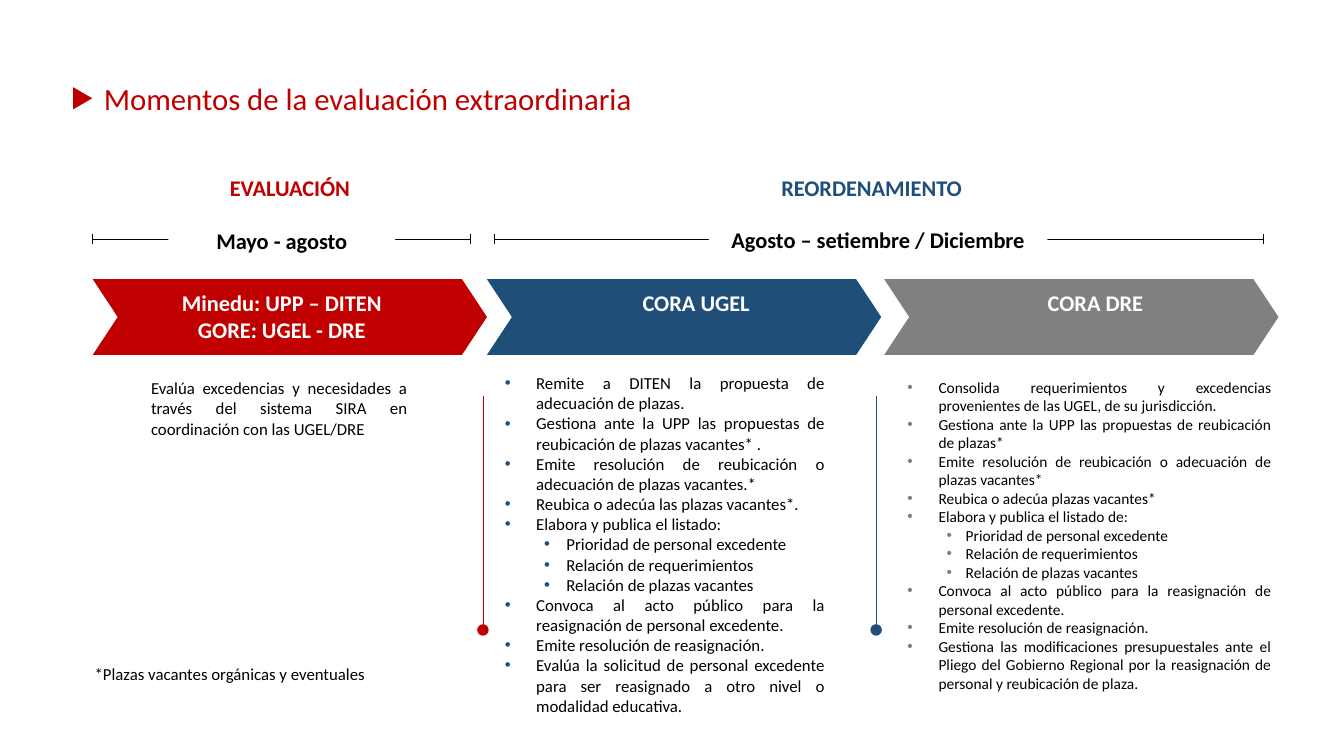
from lxml import etree
from pptx import Presentation
from pptx.dml.color import RGBColor
from pptx.enum import shapes, text
from pptx.oxml import ns
from pptx.util import Inches, Pt

RED = RGBColor(0xC0, 0x00, 0x00)
BLUE = RGBColor(0x1F, 0x4E, 0x79)
GRAY = RGBColor(0x80, 0x80, 0x80)
DOT_GRAY = RGBColor(0x7F, 0x7F, 0x7F)
BLACK = RGBColor(0, 0, 0)
WHITE = RGBColor(0xFF, 0xFF, 0xFF)

LEFT, CENTER, JUST = (text.PP_ALIGN.LEFT, text.PP_ALIGN.CENTER,
                      text.PP_ALIGN.JUSTIFY)
KIND = shapes.MSO_SHAPE

# Each task is (level, text)
UGEL = [
    (0, "Remite a DITEN la propuesta de adecuación de plazas."),
    (0, "Gestiona ante la UPP las propuestas de reubicación de plazas vacantes* ."),
    (0, "Emite resolución de reubicación o adecuación de plazas vacantes.*"),
    (0, "Reubica o adecúa las plazas vacantes*."),
    (0, "Elabora y publica el listado:"),
    (1, "Prioridad de personal excedente"),
    (1, "Relación de requerimientos"),
    (1, "Relación de plazas vacantes"),
    (0, "Convoca al acto público para la reasignación de personal excedente."),
    (0, "Emite resolución de reasignación."),
    (0, "Evalúa la solicitud de personal excedente para ser reasignado a otro "
        "nivel o modalidad educativa."),
]
DRE = [
    (0, "Consolida requerimientos y excedencias provenientes de las UGEL, de su "
        "jurisdicción."),
    (0, "Gestiona ante la UPP las propuestas de reubicación de plazas*"),
    (0, "Emite resolución de reubicación o adecuación de plazas vacantes*"),
    (0, "Reubica o adecúa plazas vacantes*"),
    (0, "Elabora y publica el listado de:"),
    (1, "Prioridad de personal excedente"),
    (1, "Relación de requerimientos"),
    (1, "Relación de plazas vacantes"),
    (0, "Convoca al acto público para la reasignación de personal excedente."),
    (0, "Emite resolución de reasignación."),
    (0, "Gestiona las modificaciones presupuestales ante el Pliego del Gobierno "
        "Regional por la reasignación de personal y reubicación de plaza."),
]


def write(para, words, size=12, color=BLACK, bold=False, align=LEFT):
    para.alignment = align
    run = para.add_run()
    run.text = words
    font = run.font
    font.name, font.size, font.bold = "Calibri", Pt(size), bold
    font.color.rgb = color


def fill_frame(frame, lines, **form):
    frame.word_wrap = True
    frame.auto_size = text.MSO_AUTO_SIZE.NONE
    frame.vertical_anchor = text.MSO_ANCHOR.TOP
    for i, words in enumerate(lines):
        para = frame.paragraphs[0] if i == 0 else frame.add_paragraph()
        write(para, words, **form)


def add_text(slide, box, *lines, **form):
    shape = slide.shapes.add_textbox(*map(Inches, box))
    fill_frame(shape.text_frame, lines, **form)
    return shape


def add_label(slide, box, words, color):
    label = add_text(slide, box, words, size=16, color=color, bold=True,
                     align=CENTER)
    label.fill.solid()
    label.fill.fore_color.rgb = WHITE


def add_form(slide, kind, box, color, edge=False):
    shape = slide.shapes.add_shape(kind, *map(Inches, box))
    shape.shadow.inherit = False
    shape.fill.solid()
    shape.fill.fore_color.rgb = color
    if edge:
        shape.line.color.rgb = color
        shape.line.width = Pt(1)
    else:
        shape.line.fill.background()
    return shape


def add_line(slide, x1, y1, x2, y2, color=BLACK):
    line = slide.shapes.add_connector(
        shapes.MSO_CONNECTOR.STRAIGHT, *map(Inches, (x1, y1, x2, y2)))
    line.line.color.rgb = color
    line.line.width = Pt(0.5)
    etree.SubElement(line._element.spPr, ns.qn("a:effectLst"))


def add_bullet(para, left, hang, color):
    props = para._p.get_or_add_pPr()
    props.set("marL", str(Inches(left)))
    props.set("indent", str(-Inches(hang)))
    tint = etree.SubElement(props, ns.qn("a:buClr"))
    etree.SubElement(tint, ns.qn("a:srgbClr")).set("val", str(color))
    etree.SubElement(props, ns.qn("a:buFont")).set("typeface", "Arial")
    etree.SubElement(props, ns.qn("a:buChar")).set("char", "•")


def add_list(slide, box, tasks, size, color, inset):
    lines = [words for _, words in tasks]
    shape = add_text(slide, box, *lines, size=size, align=JUST)
    for (level, _), para in zip(tasks, shape.text_frame.paragraphs):
        left, hang = (0.58 + inset, 0.19 + inset) if level else (0.31, 0.31)
        add_bullet(para, left, hang, color)


def add_span(slide, start, end):
    y, tick = 2.37, 0.05
    add_line(slide, start, y, end, y)
    for x in (start, end):
        add_line(slide, x, y - tick, x, y + tick)


def add_rule(slide, x, color):
    add_line(slide, x, 3.93, x, 6.21, color)
    add_form(slide, KIND.OVAL, (x - 0.05, 6.2, 0.1, 0.1), color, edge=True)


def add_stage(slide, x, color, text_x, *lines):
    arrow = add_form(slide, KIND.CHEVRON, (x, 2.77, 3.91, 0.75), color)
    arrow.adjustments[0] = 0.33
    add_text(slide, (text_x, 2.82, 2.25, 0.05 + 0.32 * len(lines)), *lines,
             size=16, color=WHITE, bold=True, align=CENTER)


def main():
    deck = Presentation()
    deck.slide_width, deck.slide_height = Inches(13.33), Inches(7.5)
    slide = deck.slides.add_slide(deck.slide_layouts[5])

    # Title and its marker
    title = slide.shapes.title
    title.left, title.top = Inches(0.93), Inches(0.74)
    title.width, title.height = Inches(5.79), Inches(0.47)
    fill_frame(title.text_frame, ["Momentos de la evaluación extraordinaria"],
               size=22, color=RED, align=JUST)
    mark = add_form(slide, KIND.ISOSCELES_TRIANGLE, (0.71, 0.88, 0.22, 0.19), RED)
    mark.rotation = 90

    # Phases and their dates
    add_label(slide, (1.75, 1.68, 2.25, 0.37), "EVALUACIÓN", RED)
    add_label(slide, (7.3, 1.68, 2.69, 0.37), "REORDENAMIENTO", BLUE)
    add_span(slide, 0.92, 4.67)
    add_span(slide, 4.9, 12.53)
    add_label(slide, (1.67, 2.2, 2.25, 0.37), "Mayo - agosto", BLACK)
    add_label(slide, (7.03, 2.19, 3.36, 0.37),
              "Agosto – setiembre / Diciembre", BLACK)

    # Stages
    add_stage(slide, 0.92, RED, 1.67, "Minedu: UPP – DITEN", "GORE: UGEL - DRE")
    add_stage(slide, 4.83, BLUE, 5.78, "CORA UGEL")
    add_stage(slide, 8.77, GRAY, 9.74, "CORA DRE")

    # Tasks of each stage
    add_text(slide, (1.4, 3.7, 2.74, 0.71),
             "Evalúa excedencias y necesidades a través del sistema SIRA en "
             "coordinación con las UGEL/DRE", align=JUST)
    add_list(slide, (4.91, 3.65, 3.37, 3.53), UGEL, 12, BLUE, 0.03)
    add_list(slide, (8.9, 3.7, 3.81, 3.25), DRE, 11, DOT_GRAY, 0)
    add_rule(slide, 4.79, RED)
    add_rule(slide, 8.69, BLUE)

    # Footnote
    add_text(slide, (0.84, 6.54, 3.46, 0.3),
             "*Plazas vacantes orgánicas y eventuales")

    deck.save("out.pptx")


if __name__ == "__main__":
    main()
